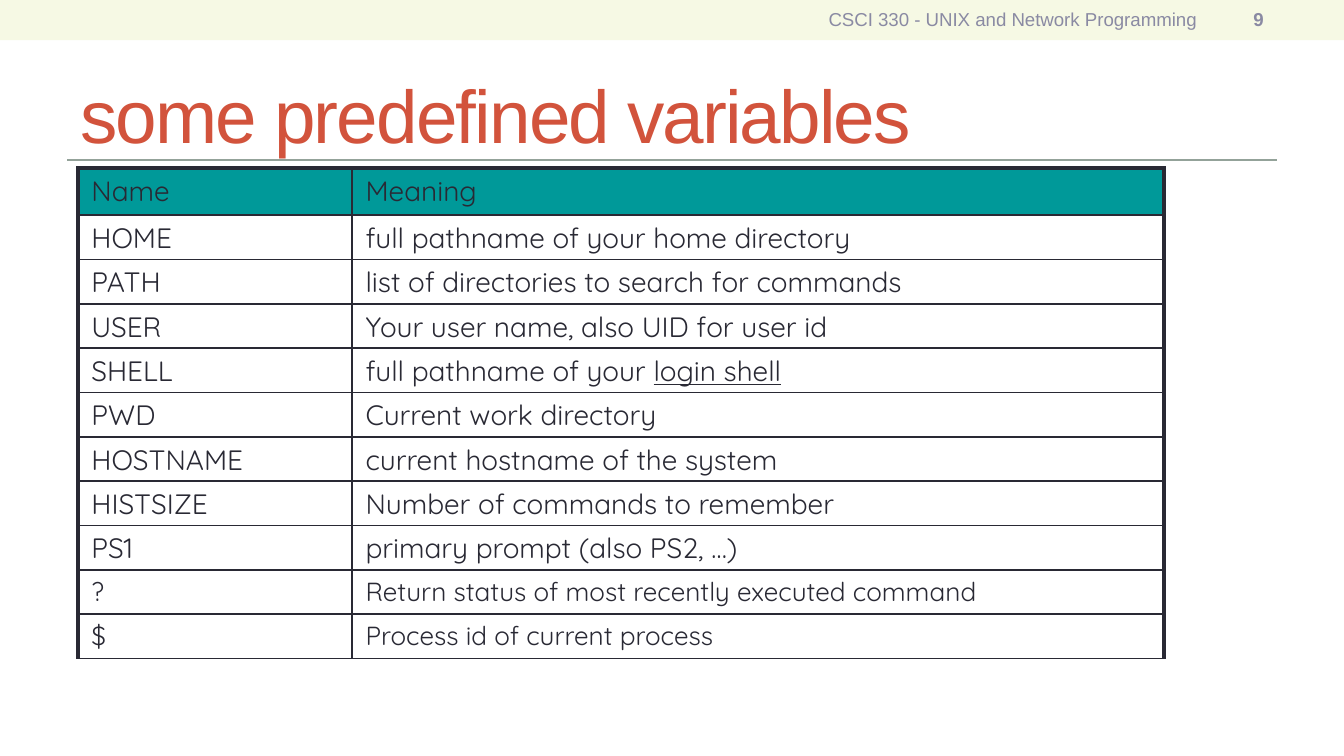
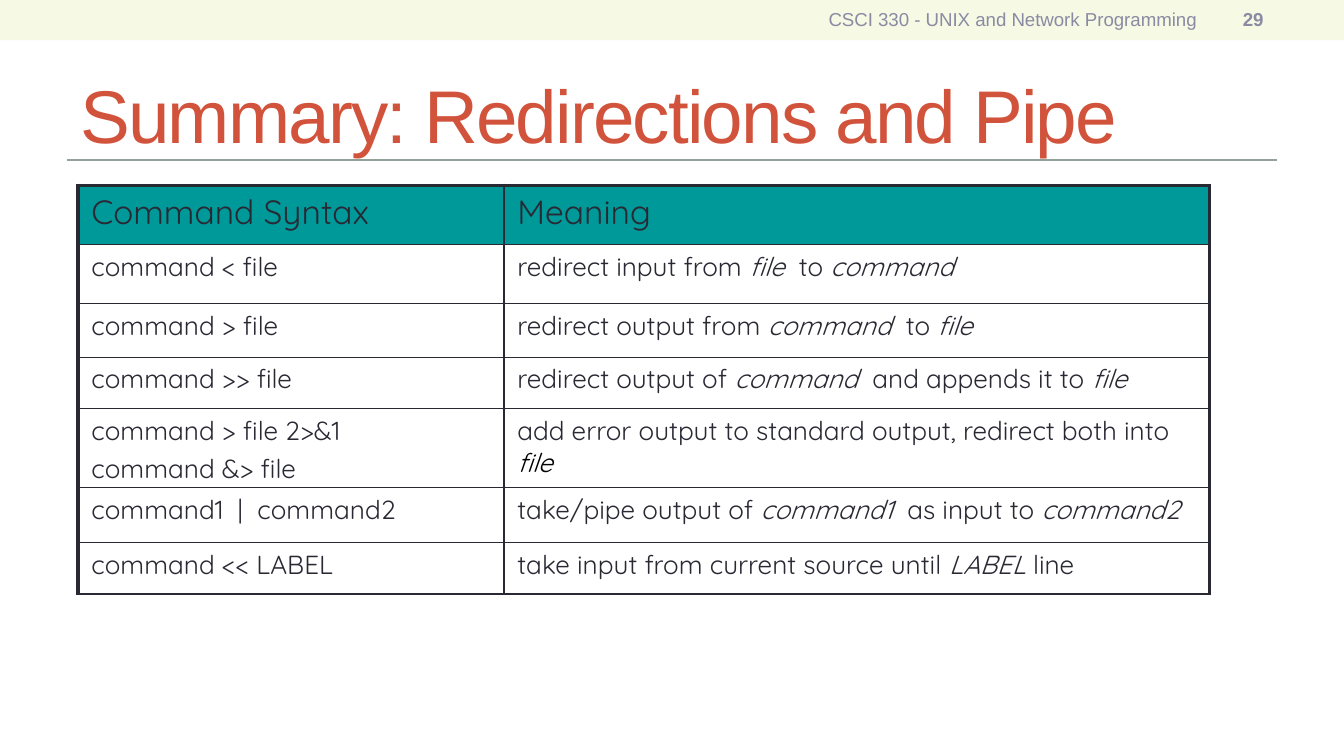
"""Builds two course slides with tables of shell variables and redirections."""
import pptx
import pptx.dml.color
import pptx.enum.shapes
import pptx.enum.text
import pptx.oxml
import pptx.oxml.ns
import pptx.util
from pptx.util import Inches

INK, TEAL, BAND, RULE = "292934", "009999", "F6F9E4", "93A299"
RED, GREY, BLACK = "D2533C", "8A8AA3", "000000"
COURSE = "CSCI 330 - UNIX and Network Programming"
THIN, THICK = 1, 2.25
RIGHT = pptx.enum.text.PP_ALIGN.RIGHT
LEFT = pptx.enum.text.PP_ALIGN.LEFT
TITLE = {"name": "Arial", "size": pptx.util.Pt(40)}
FOOTER = {"name": "Arial", "size": pptx.util.Pt(10)}
NUMBER = {**FOOTER, "bold": True}

slides = [
    {
        "title": "some predefined variables", "number": "9",
        "at": (0.58, 1.25), "cols": (2.04, 6.04),
        "heights": [0.35] + [0.33] * 10,
        "sizes": [15] * 9 + [14] * 2,
        "emphasis": {"underline": True},
        "rows": [
            ("Name", "Meaning"),
            ("HOME", "full pathname of your home directory"),
            ("PATH", "list of directories to search for commands"),
            ("USER", "Your user name, also UID for user id"),
            ("SHELL", "full pathname of your *login shell*"),
            ("PWD", "Current work directory"),
            ("HOSTNAME", "current hostname of the system"),
            ("HISTSIZE", "Number of commands to remember"),
            ("PS1", "primary prompt (also PS2, …)"),
            ("?", "Return status of most recently executed command"),
            ("$", "Process id of current process"),
        ],
    },
    {
        "title": "Summary: Redirections and Pipe", "number": "29",
        "at": (0.58, 1.38), "cols": (3.17, 5.25),
        "heights": [0.44, 0.44, 0.4, 0.38, 0.57, 0.41, 0.38],
        "sizes": [18] + [14] * 6,
        "emphasis": {"italic": True},
        "rows": [
            ("Command Syntax", "Meaning"),
            ("command < file", "redirect input from *file*  to *command*"),
            ("command > file", "redirect output from *command*  to *file*"),
            ("command >> file", "redirect output of *command*  and appends it to *file*"),
            ("command > file 2>&1\ncommand &> file",
             "add error output to standard output, redirect both into *file*"),
            ("command1  |  command2",
             "take/pipe output of *command1*  as input to *command2*"),
            ("command << LABEL", "take input from current source until *LABEL* line"),
        ],
    },
]


def rgb(value):
    return pptx.dml.color.RGBColor.from_string(value)


def write(p, text, color, fmt):
    r = p.add_run()
    r.text = text
    r.font.color.rgb = rgb(color)
    for name, value in fmt.items():
        setattr(r.font, name, value)
    return r


prs = pptx.Presentation()
prs.slide_width = Inches(10)
prs.slide_height = prs.slide_width * 9 // 16

for data in slides:
    s = prs.slides.add_slide(prs.slide_layouts[6])

    sp = s.shapes.add_shape(pptx.enum.shapes.MSO_SHAPE.RECTANGLE,
                            0, 0, prs.slide_width, Inches(0.3))
    sp.shadow.inherit = False
    sp.fill.solid()
    sp.fill.fore_color.rgb = rgb(BAND)
    sp.line.fill.background()

    line = s.shapes.add_connector(pptx.enum.shapes.MSO_CONNECTOR.STRAIGHT,
                                  Inches(0.5), Inches(1.19), Inches(9.5), Inches(1.19))
    line.line.color.rgb = rgb(RULE)
    line.line.width = pptx.util.Pt(0.75)
    line._element.spPr.append(pptx.oxml.parse_xml(
        f'<a:effectLst {pptx.oxml.ns.nsdecls("a")}/>'))

    for box, text, color, fmt, align in (
        ((0.5, 0.44, 9, 0.81), data["title"], RED, TITLE, LEFT),
        ((9, 0.01, 0.5, 0.27), data["number"], GREY, NUMBER, RIGHT),
        ((3.75, 0.01, 5.25, 0.27), COURSE, GREY, FOOTER, RIGHT),
    ):
        tf = s.shapes.add_textbox(*map(Inches, box)).text_frame
        tf.word_wrap = True
        tf.vertical_anchor = pptx.enum.text.MSO_ANCHOR.MIDDLE
        p = tf.paragraphs[0]
        p.alignment = align
        r = write(p, text, color, fmt)
        if fmt is TITLE:
            r.font._element.set("spc", "-100")

    rows, cols, heights = data["rows"], data["cols"], data["heights"]
    size = sum(cols), sum(heights)
    table = s.shapes.add_table(len(rows), len(cols),
                               *map(Inches, data["at"] + size)).table
    table.first_row = table.horz_banding = False
    for column, width in zip(table.columns, cols):
        column.width = Inches(width)
    for row, height in zip(table.rows, heights):
        row.height = Inches(height)

    for i, texts in enumerate(rows):
        for j, text in enumerate(texts):
            cell = table.cell(i, j)
            cell.margin_left = cell.margin_right = Inches(0.1)
            cell.margin_top = cell.margin_bottom = Inches(0.04)
            if i == 0:
                cell.fill.solid()
                cell.fill.fore_color.rgb = rgb(TEAL)
            else:
                cell.fill.background()

            borders = {"lnL": THIN if j else THICK, "lnR": THICK if j else THIN,
                       "lnT": THIN if i else THICK, "lnB": THIN}
            tcPr = cell._tc.get_or_add_tcPr()
            for k, (side, width) in enumerate(borders.items()):
                tcPr.insert(k, pptx.oxml.parse_xml(
                    f'<a:{side} {pptx.oxml.ns.nsdecls("a")} w="{pptx.util.Pt(width)}">'
                    f'<a:solidFill><a:srgbClr val="{INK}"/></a:solidFill></a:{side}>'))

            tf = cell.text_frame
            font = {"name": "Quicksand", "size": pptx.util.Pt(data["sizes"][i])}
            for n, paragraph in enumerate(text.split("\n")):
                p = tf.add_paragraph() if n else tf.paragraphs[0]
                if n:
                    p.space_before = pptx.util.Pt(3)
                for m, part in enumerate(paragraph.split("*")):
                    if part:
                        write(p, part, INK, {**font, **(data["emphasis"] if m % 2 else {})})

both_into_file = table.cell(4, 1).text_frame.paragraphs[0].runs[1]
both_into_file.font.color.rgb = rgb(BLACK)

prs.save("out.pptx")
